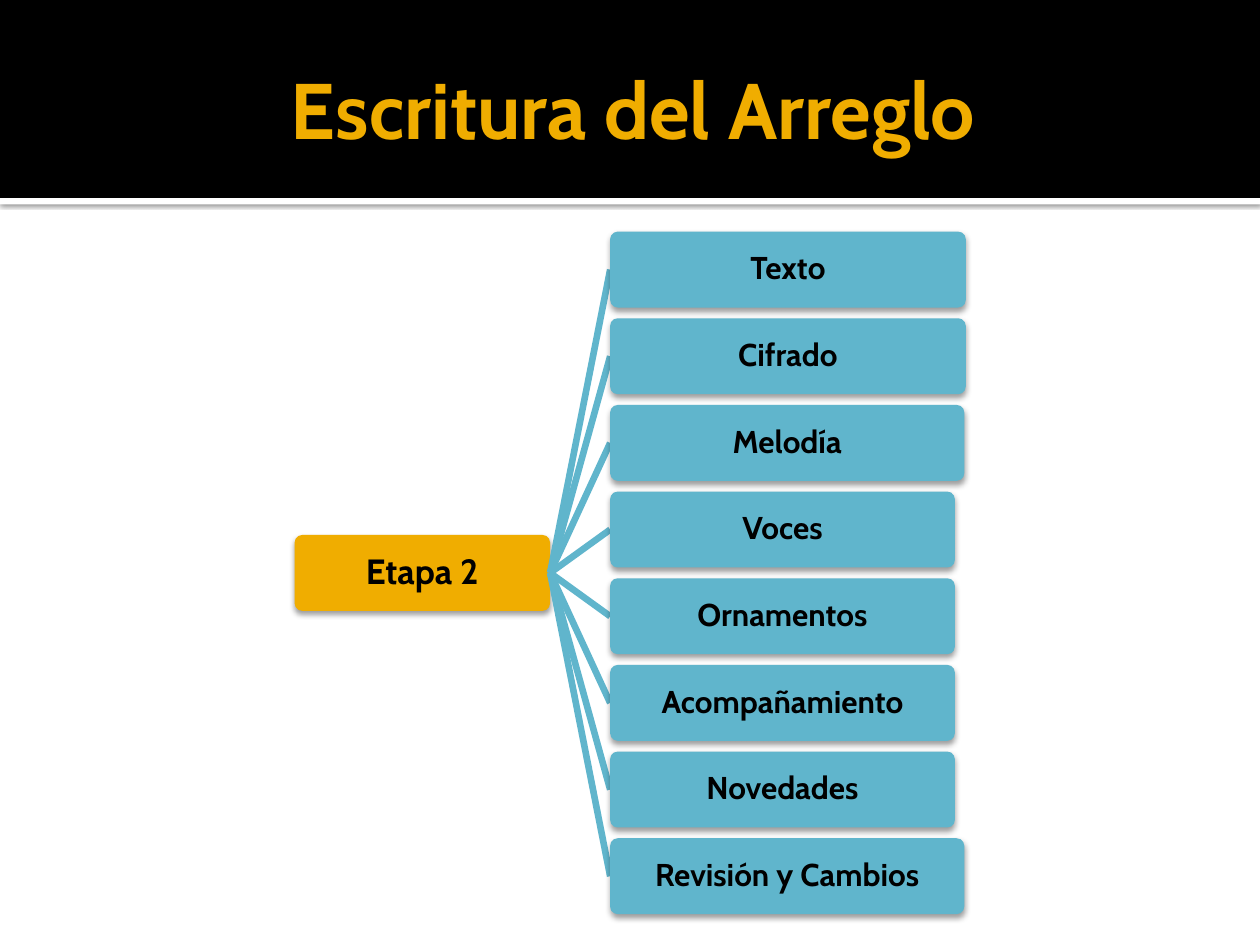
import pptx
import pptx.util
import pptx.dml.color
import pptx.enum.shapes
import pptx.enum.text
import pptx.oxml
import pptx.oxml.ns
import lxml.etree

Cm, Pt = pptx.util.Cm, pptx.util.Pt
SHAPE = pptx.enum.shapes.MSO_SHAPE
rgb = pptx.dml.color.RGBColor.from_string
qn = pptx.oxml.ns.qn


def add_box(kind, x, y, w, h, color, shadow=None):
    sp = s.shapes.add_shape(kind, Cm(x), Cm(y), Cm(w), Cm(h))
    sp.fill.solid()
    sp.fill.fore_color.rgb = rgb(color)
    sp.line.fill.background()
    sp.shadow.inherit = False
    if shadow:
        alpha, blur, dist = shadow
        effects = sp.element.spPr.find(qn("a:effectLst"))
        outer = lxml.etree.SubElement(
            effects, qn("a:outerShdw"), blurRad=str(Pt(blur)), dist=str(Pt(dist)),
            dir="5400000", algn="t", rotWithShape="0")
        clr = lxml.etree.SubElement(outer, qn("a:srgbClr"), val="000000")
        lxml.etree.SubElement(clr, qn("a:alpha"), val=str(alpha * 1000))
    return sp


def set_text(sp, text, size, color):
    tf = sp.text_frame
    tf.text = text
    tf.word_wrap = True
    tf.auto_size = pptx.enum.text.MSO_AUTO_SIZE.NONE
    tf.vertical_anchor = pptx.enum.text.MSO_ANCHOR.MIDDLE
    p = tf.paragraphs[0]
    p.alignment = pptx.enum.text.PP_ALIGN.CENTER
    font = p.runs[0].font
    font.name, font.size, font.bold = "Cabin", Pt(size), True
    font.color.rgb = rgb(color)
    return tf


prs = pptx.Presentation()
prs.slide_width, prs.slide_height = Cm(25.4), Cm(19.05)
s = prs.slides.add_slide(prs.slide_layouts[5])

add_box(SHAPE.RECTANGLE, 0, 3.99, 25.4, 0.13, "FFFFFF", (60, 2.5, 0.8))
add_box(SHAPE.RECTANGLE, 0, 0, 25.4, 3.99, "000000")

title = s.shapes.title
title.left, title.top, title.width, title.height = Cm(1.27), Cm(0.43), Cm(22.86), Cm(3.48)
tf = set_text(title, "Escritura del Arreglo", 45, "F0AD00")
tf.margin_left = Cm(0.25)
tf.margin_right = tf.margin_top = tf.margin_bottom = Cm(0.13)
s.shapes.element.append(title.element)

steps = [
    ("Texto", 7.17), ("Cifrado", 7.17), ("Melodía", 7.14), ("Voces", 6.95),
    ("Ornamentos", 6.95), ("Acompañamiento", 6.95), ("Novedades", 6.95),
    ("Revisión y Cambios", 7.14),
]
top, pitch, height = 4.67, 1.747, 1.53
nodes = [("Etapa 2", 5.94, top + pitch * (len(steps) - 1) / 2, 5.15, "F0AD00", 20)]
for i, (text, width) in enumerate(steps):
    nodes.append((text, 12.3, top + pitch * i, width, "60B5CC", 18))

root = None
for text, x, y, width, color, size in nodes:
    sp = add_box(SHAPE.ROUNDED_RECTANGLE, x, y, width, height, color, (38, 3.5, 2))
    sp.adjustments[0] = 0.1
    tf = set_text(sp, text, size, "000000")
    tf.margin_left = tf.margin_right = tf.margin_top = tf.margin_bottom = Cm(0.03)
    tf.paragraphs[0].line_spacing = 0.9
    if root is None:
        root = sp
        continue
    line = s.shapes.add_connector(pptx.enum.shapes.MSO_CONNECTOR.STRAIGHT, 0, 0, 0, 0)
    line.begin_connect(root, 3)
    line.end_connect(sp, 1)
    line.line.color.rgb = rgb("60B5CC")
    line.line.width = Pt(3.78)
    lxml.etree.SubElement(line.element.spPr, qn("a:effectLst"))
    sp.element.addprevious(line.element)

prs.save("out.pptx")
